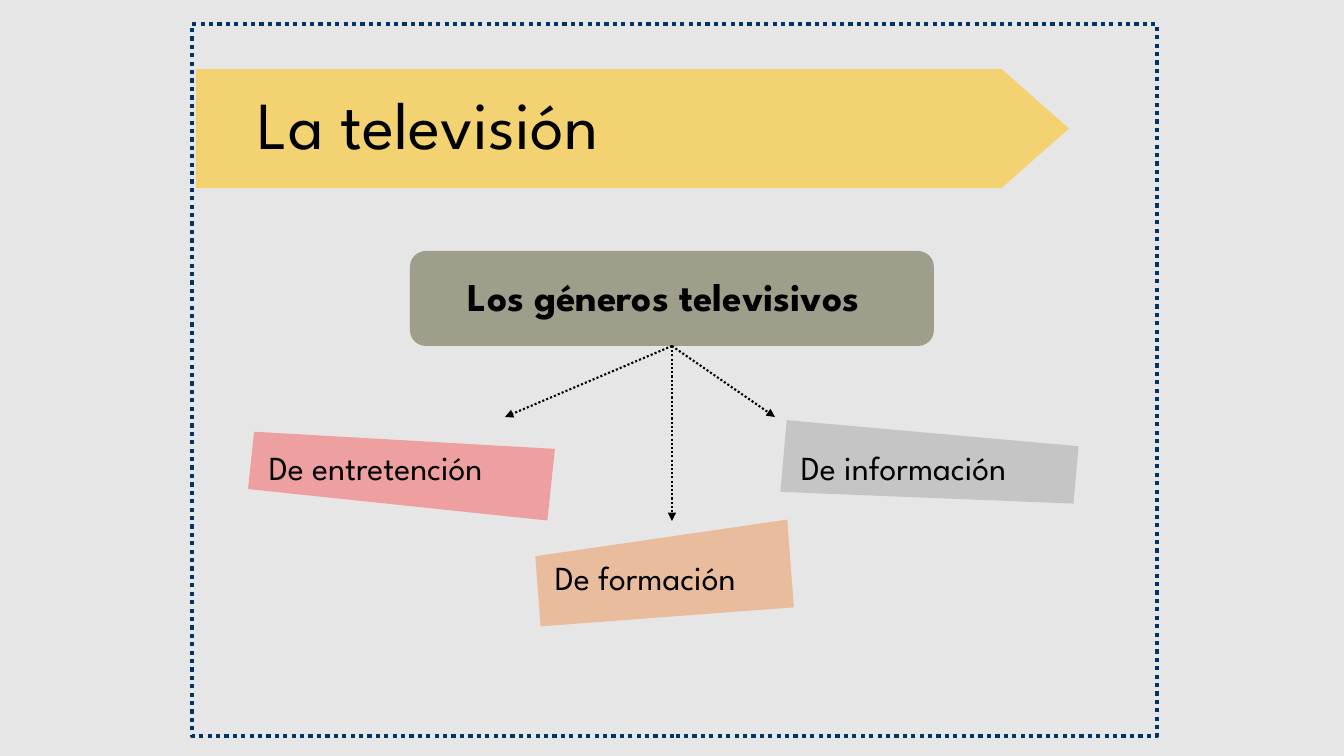
from lxml import etree
from pptx import Presentation
from pptx import util as u
from pptx.dml.color import RGBColor
from pptx.enum import dml, shapes, text
from pptx.oxml import ns

# Content: lengths in px
SLIDE = (1344, 756)
EMU_PER_PX = 914400 / 100.8
FONT = "League Spartan"
COLORS = {
    "background": "E7E6E6", "ink": "000000", "border": "003366",
    "banner": "FFC000", "topic": "333300", "entertainment": "FF0000",
    "education": "ED7D31", "information": "A5A5A5",
}
BORDER = (192, 24, 965, 712)
BANNER = (196, 69, 873, 119)
TITLE = ("La televisión", (219, 60, 548, 126))
TOPIC = ("Los géneros televisivos", (410, 251, 524, 95), (458, 267, 450, 57))
# wording, colour, opacity %, card box, rotation, label box, arrow tip
GENRES = [
    ("De información", "information", 50, (783, 433, 293, 72), 185.1,
     (791, 442, 271, 50), (775, 417)),
    ("De formación", "education", 40, (537, 529, 254, 88), 355.7,
     (545, 552, 245, 50), (672, 521)),
    ("De entretención", "entertainment", 30, (251, 433, 301, 72), 6,
     (259, 442, 287, 50), (505, 417)),
]


def px(*lengths):
    return [u.Emu(round(length * EMU_PER_PX)) for length in lengths]


def rgb(name):
    return RGBColor.from_string(COLORS[name])


prs = Presentation()
prs.slide_width, prs.slide_height = px(*SLIDE)
slide = prs.slides.add_slide(prs.slide_layouts[6])
slide.background.fill.solid()
slide.background.fill.fore_color.rgb = rgb("background")


def add_panel(kind, box, color, opacity, rotation=0, adjust=None):
    panel = slide.shapes.add_shape(kind, *px(*box))
    panel.shadow.inherit = False
    panel.line.fill.background()
    panel.fill.solid()
    panel.fill.fore_color.rgb = rgb(color)
    tint = panel.fill._xPr.find(".//" + ns.qn("a:srgbClr"))
    etree.SubElement(tint, ns.qn("a:alpha"), val=str(opacity * 1000))
    panel.rotation = rotation
    if adjust is not None:
        panel.adjustments[0] = adjust
    return panel


def add_label(wording, box, size, bold=False):
    label = slide.shapes.add_textbox(*px(*box))
    label.text_frame.word_wrap = True
    paragraph = label.text_frame.paragraphs[0]
    paragraph.text = wording
    font = paragraph.font
    font.name, font.size, font.bold = FONT, u.Pt(size), bold
    font.color.rgb = rgb("ink")
    return label.text_frame


def style_dotted(line, color, width):
    line.color.rgb = rgb(color)
    line.width = u.Pt(width)
    line.dash_style = dml.MSO_LINE.ROUND_DOT


# Coloured panels
for _, color, opacity, card, rotation, _, _ in GENRES:
    add_panel(shapes.MSO_SHAPE.FLOWCHART_MANUAL_INPUT, card, color, opacity, rotation)
topic = add_panel(shapes.MSO_SHAPE.ROUNDED_RECTANGLE, TOPIC[1], "topic", 40, adjust=0.167)
add_panel(shapes.MSO_SHAPE.PENTAGON, BANNER, "banner", 50, adjust=0.566)

# Title, indented inside the banner
title = add_label(*TITLE, 48)
title.vertical_anchor = text.MSO_ANCHOR.MIDDLE
title.margin_left = px(39)[0]

# Dotted border
border = slide.shapes.add_shape(shapes.MSO_SHAPE.RECTANGLE, *px(*BORDER))
border.shadow.inherit = False
border.fill.background()
style_dotted(border.line, "border", 3)

# Topic and genre wording
add_label(TOPIC[0], TOPIC[2], 28, bold=True)
for wording, _, _, _, _, label_box, _ in GENRES:
    add_label(wording, label_box, 24)

# Arrows from the topic to each genre
for *_, tip in GENRES:
    arrow = slide.shapes.add_connector(shapes.MSO_CONNECTOR.STRAIGHT, *px(672, 346, *tip))
    arrow.begin_connect(topic, 2)
    style_dotted(arrow.line, "ink", 1.5)
    etree.SubElement(arrow.line._get_or_add_ln(), ns.qn("a:tailEnd"), type="triangle")
    etree.SubElement(arrow._element.spPr, ns.qn("a:effectLst"))

prs.save("out.pptx")
